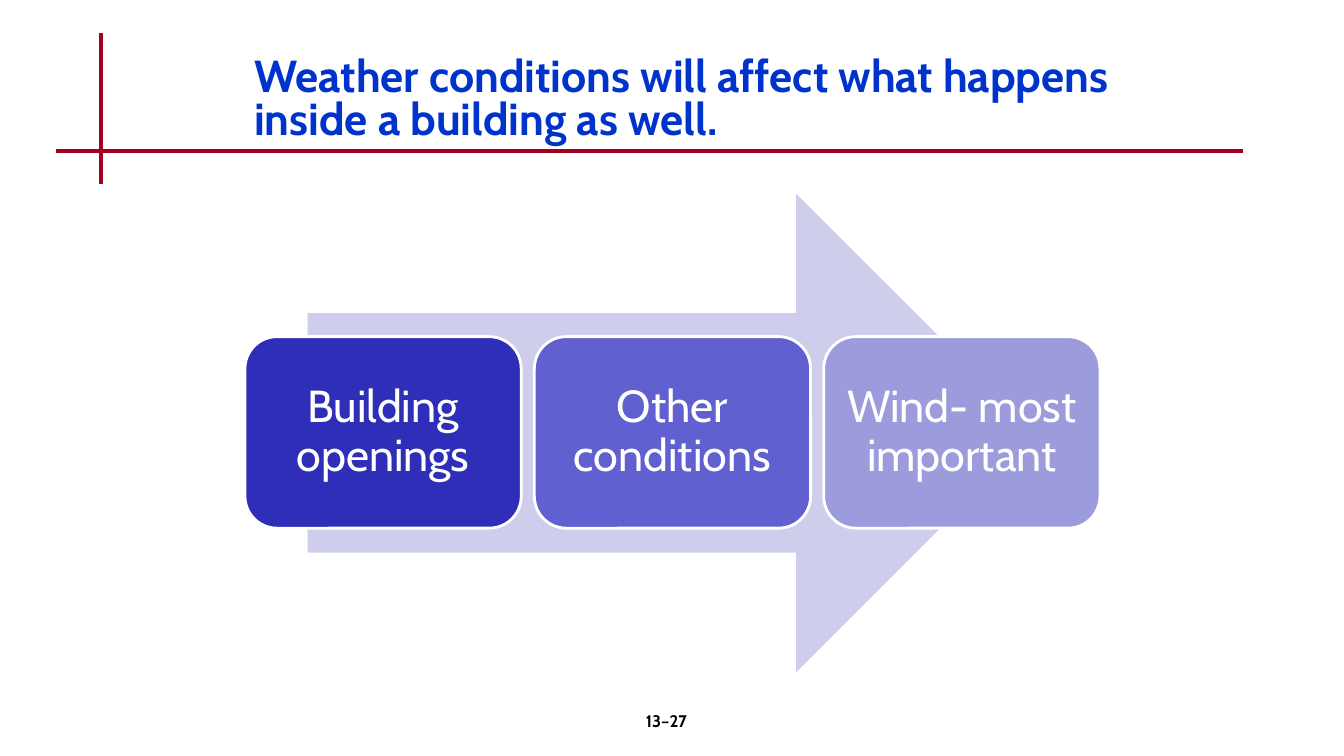
from lxml import etree
from pptx import Presentation
from pptx.dml.color import RGBColor
from pptx.enum.shapes import MSO_CONNECTOR, MSO_SHAPE
from pptx.enum.text import MSO_ANCHOR, PP_ALIGN
from pptx.oxml.ns import qn
from pptx.util import Inches, Pt

STRAIGHT = MSO_CONNECTOR.STRAIGHT
RIGHT_ARROW = MSO_SHAPE.RIGHT_ARROW
ROUNDED = MSO_SHAPE.ROUNDED_RECTANGLE
MIDDLE, TOP = MSO_ANCHOR.MIDDLE, MSO_ANCHOR.TOP
LEFT, CENTER = PP_ALIGN.LEFT, PP_ALIGN.CENTER

FONT = "Cabin"
RED = RGBColor(0xA5, 0x00, 0x21)
BLUE = RGBColor(0x00, 0x33, 0xCC)
BLACK = RGBColor(0x00, 0x00, 0x00)
WHITE = RGBColor(0xFF, 0xFF, 0xFF)
ARROW_FILL = RGBColor(0xCE, 0xCE, 0xEC)

STEPS = [
    ("Building openings", RGBColor(0x2E, 0x2E, 0xB9)),
    ("Other conditions", RGBColor(0x60, 0x60, 0xD0)),
    ("Wind- most important", RGBColor(0x9C, 0x9C, 0xDD)),
]
STEP_LEFT, STEP_PITCH = 2.43, 2.87


def write(sp, text, size, color, align, anchor, bold=False, spacing=1.0):
    tf = sp.text_frame
    tf.word_wrap = True
    tf.vertical_anchor = anchor
    p = tf.paragraphs[0]
    p.text = text
    p.alignment = align
    p.line_spacing = spacing
    p.font.name = FONT
    p.font.size = Pt(size)
    p.font.bold = bold
    p.font.color.rgb = color


def add_rule(slide, x1, y1, x2, y2):
    line = slide.shapes.add_connector(
        STRAIGHT, Inches(x1), Inches(y1), Inches(x2), Inches(y2))
    line.line.color.rgb = RED
    line.line.width = Pt(3)
    etree.SubElement(line._element.spPr, qn("a:effectLst"))


def add_title(slide, text):
    title = slide.shapes.title
    title.left, title.top = Inches(2.42), Inches(0.5)
    title.width, title.height = Inches(8.97), Inches(1)
    write(title, text, 32, BLUE, LEFT, MIDDLE, bold=True, spacing=0.8)


def add_block(slide, kind, x, y, w, h, fill):
    sp = slide.shapes.add_shape(kind, Inches(x), Inches(y), Inches(w), Inches(h))
    sp.shadow.inherit = False
    sp.fill.solid()
    sp.fill.fore_color.rgb = fill
    sp.line.fill.background()
    return sp


def add_step(slide, x, text, fill):
    sp = add_block(slide, ROUNDED, x, 3.34, 2.74, 1.9, fill)
    sp.line.color.rgb = WHITE
    sp.line.width = Pt(2)
    tf = sp.text_frame
    tf.margin_left = tf.margin_right = Inches(0.13)
    tf.margin_top = tf.margin_bottom = Inches(0.13)
    write(sp, text, 32, WHITE, CENTER, MIDDLE, spacing=0.9)


def add_page_number(slide, text):
    box = slide.shapes.add_textbox(
        Inches(5.22), Inches(7), Inches(2.78), Inches(0.5))
    write(box, text, 12, BLACK, CENTER, TOP, bold=True)


def main():
    prs = Presentation()
    prs.slide_width, prs.slide_height = Inches(13.33), Inches(7.5)
    slide = prs.slides.add_slide(prs.slide_layouts[5])

    # Heading with crossed rules
    add_rule(slide, 1, 0.33, 1, 1.83)
    add_rule(slide, 0.56, 1.5, 12.33, 1.5)
    add_title(slide, "Weather conditions will affect what happens "
                     "inside a building as well.")

    # Arrow with the three steps on it
    add_block(slide, RIGHT_ARROW, 3.05, 1.92, 7.22, 4.75, ARROW_FILL)
    for i, (text, fill) in enumerate(STEPS):
        add_step(slide, STEP_LEFT + i * STEP_PITCH, text, fill)

    # Footer
    add_page_number(slide, "13–27")
    prs.save("out.pptx")


if __name__ == "__main__":
    main()
